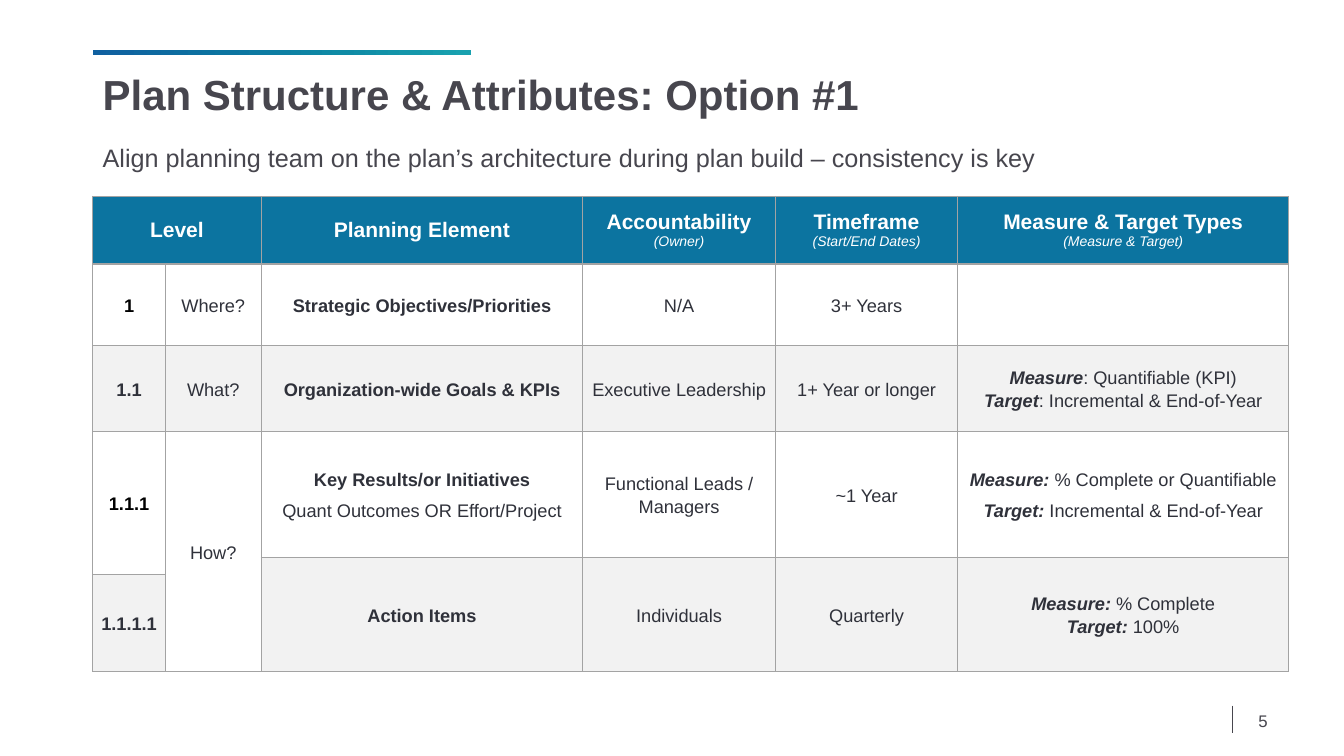
"""Build the plan structure slide with its table of levels and attributes."""
from copy import deepcopy
from dataclasses import dataclass

from lxml import etree
from pptx import Presentation
from pptx import util as u
from pptx.dml.color import RGBColor
from pptx.enum import shapes, text
from pptx.oxml import ns

DARK = RGBColor(0x47, 0x46, 0x4E)
BODY = RGBColor(0x2F, 0x31, 0x3A)
BLACK = RGBColor(0, 0, 0)
WHITE = RGBColor(0xFF, 0xFF, 0xFF)
GRAY = RGBColor(0xF2, 0xF2, 0xF2)
BLUE = RGBColor(0x0C, 0x74, 0xA0)
BORDER = RGBColor(0xA3, 0xA3, 0xA3)
BAR_STOPS = (
    (0, RGBColor(0x10, 0x60, 0xA0)),
    (0.36, BLUE),
    (0.66, RGBColor(0x0F, 0x8B, 0xA5)),
    (0.99, RGBColor(0x19, 0xA1, 0xAF)),
)
FONT = "Arial"
COLS = (0.72, 0.95, 3.19, 1.91, 1.81, 3.28)
ROWS = (0.67, 0.81, 0.85, 1.25, 0.17, 0.96)


@dataclass(frozen=True)
class Run:
    """A stretch of text in one style; a newline at its end breaks the line."""
    text: str
    bold: bool = False
    italic: bool = False
    size: float | None = None


@dataclass(frozen=True)
class Cell:
    """A table cell, its paragraphs and the rows and columns it covers."""
    row: int
    col: int
    paras: tuple[tuple[Run, ...], ...] = ()
    fill: RGBColor = WHITE
    color: RGBColor = BODY
    rows: int = 1
    cols: int = 1


@dataclass(frozen=True)
class Label:
    """A line of text standing outside the table."""
    text: str
    box: tuple[float, float, float, float]
    size: float
    bold: bool = False
    align: text.PP_ALIGN = text.PP_ALIGN.LEFT
    anchor: text.MSO_ANCHOR = text.MSO_ANCHOR.MIDDLE
    spacing: float = 1.0


def plain(words: str) -> tuple[tuple[Run, ...], ...]:
    """Return one regular paragraph."""
    return ((Run(words),),)


def strong(words: str) -> tuple[tuple[Run, ...], ...]:
    """Return one bold paragraph."""
    return ((Run(words, bold=True),),)


def heading(title: str, note: str) -> tuple[tuple[Run, ...], ...]:
    """Return a column heading with a small note below."""
    return ((Run(title + "\n", bold=True), Run(note, italic=True, size=10)),)


def term(name: str, words: str) -> tuple[Run, ...]:
    """Return a bold italic term followed by its meaning."""
    return Run(name, bold=True, italic=True), Run(words)


LABELS = (
    Label("Plan Structure & Attributes: Option #1", (0.92, 0.53, 11.5, 0.87), 30,
          bold=True, spacing=0.9),
    Label("Align planning team on the plan’s architecture during plan build – consistency is key",
          (0.92, 1.36, 9.57, 0.4), 18, anchor=text.MSO_ANCHOR.TOP),
    Label("5", (9.42, 6.95, 3.25, 0.4), 12, align=text.PP_ALIGN.RIGHT),
)
CELLS = (
    Cell(0, 0, strong("Level"), BLUE, WHITE, cols=2),
    Cell(0, 2, strong("Planning Element"), BLUE, WHITE),
    Cell(0, 3, heading("Accountability", "(Owner)"), BLUE, WHITE),
    Cell(0, 4, heading("Timeframe", "(Start/End Dates)"), BLUE, WHITE),
    Cell(0, 5, heading("Measure & Target Types", "(Measure & Target)"), BLUE, WHITE),
    Cell(1, 0, strong("1"), color=BLACK),
    Cell(1, 1, plain("Where?")),
    Cell(1, 2, strong("Strategic Objectives/Priorities")),
    Cell(1, 3, plain("N/A")),
    Cell(1, 4, plain("3+ Years")),
    Cell(1, 5),
    Cell(2, 0, strong("1.1"), GRAY),
    Cell(2, 1, plain("What?"), GRAY),
    Cell(2, 2, strong("Organization-wide Goals & KPIs"), GRAY),
    Cell(2, 3, plain("Executive Leadership"), GRAY),
    Cell(2, 4, plain("1+ Year or longer"), GRAY),
    Cell(2, 5, (term("Measure", ": Quantifiable (KPI)\n")
                + term("Target", ": Incremental & End-of-Year"),), GRAY),
    Cell(3, 0, strong("1.1.1"), color=BLACK, rows=2),
    Cell(3, 1, plain("How?"), rows=3),
    Cell(3, 2, strong("Key Results/or Initiatives") + plain("Quant Outcomes OR Effort/Project")),
    Cell(3, 3, plain("Functional Leads / Managers")),
    Cell(3, 4, plain("~1 Year")),
    Cell(3, 5, (term("Measure: ", "% Complete or Quantifiable"),
                term("Target: ", "Incremental & End-of-Year"))),
    Cell(4, 2, strong("Action Items"), GRAY, rows=2),
    Cell(4, 3, plain("Individuals"), GRAY, rows=2),
    Cell(4, 4, plain("Quarterly"), GRAY, rows=2),
    Cell(4, 5, (term("Measure: ", "% Complete\n") + term("Target: ", "100%"),), GRAY, rows=2),
    Cell(5, 0, strong("1.1.1.1"), GRAY),
)


def set_font(p, size: float, color: RGBColor) -> None:
    """Set the shared font of a paragraph."""
    p.font.name, p.font.size = FONT, u.Pt(size)
    p.font.color.rgb = color


def add_label(s, label: Label) -> None:
    """Draw a text box."""
    tf = s.shapes.add_textbox(*map(u.Inches, label.box)).text_frame
    tf.word_wrap = True
    tf.vertical_anchor = label.anchor
    p = tf.paragraphs[0]
    p.text, p.alignment, p.line_spacing = label.text, label.align, label.spacing
    set_font(p, label.size, DARK)
    p.font.bold = label.bold


def add_bar(s) -> None:
    """Draw the gradient bar above the title."""
    sp = s.shapes.add_shape(shapes.MSO_SHAPE.RECTANGLE, *map(u.Inches, (0.92, 0.5, 3.75, 0.05)))
    sp.shadow.inherit = False
    sp.line.fill.background()
    sp.fill.gradient()
    sp.fill.gradient_angle = 0
    stops = sp.fill._fill._gradFill.gsLst
    stops.extend([deepcopy(stops[0]), deepcopy(stops[0])])
    for stop, (position, color) in zip(sp.fill.gradient_stops, BAR_STOPS):
        stop.position, stop.color.rgb = position, color


def add_divider(s) -> None:
    """Draw the thin line beside the slide number."""
    line = s.shapes.add_connector(shapes.MSO_CONNECTOR.STRAIGHT,
                                  *map(u.Inches, (12.22, 7, 12.22, 7.27)))
    line.line.color.rgb, line.line.width = DARK, u.Pt(0.5)
    etree.SubElement(line._element.spPr, ns.qn("a:effectLst"))


def frame_cell(cell) -> None:
    """Give a table cell its margins and borders."""
    cell.margin_left = cell.margin_right = cell.margin_top = cell.margin_bottom = u.Inches(0.05)
    tc_pr = cell._tc.get_or_add_tcPr()
    for side in ("a:lnL", "a:lnR", "a:lnT", "a:lnB"):
        ln = etree.SubElement(tc_pr, ns.qn(side), w=str(u.Pt(1)))
        fill = etree.SubElement(ln, ns.qn("a:solidFill"))
        etree.SubElement(fill, ns.qn("a:srgbClr"), val=str(BORDER))


def fill_cell(table, item: Cell) -> None:
    """Merge, colour and write a table cell."""
    cell = table.cell(item.row, item.col)
    if item.rows * item.cols > 1:
        cell.merge(table.cell(item.row + item.rows - 1, item.col + item.cols - 1))
    cell.fill.solid()
    cell.fill.fore_color.rgb = item.fill
    cell.vertical_anchor = text.MSO_ANCHOR.MIDDLE
    tf = cell.text_frame
    for i, runs in enumerate(item.paras):
        p = tf.add_paragraph() if i else tf.paragraphs[0]
        p.alignment = text.PP_ALIGN.CENTER
        if item.row:
            p.line_spacing, p.space_after = 1.14, u.Pt(3)
            p.space_before = u.Pt(3 if i else 0)
        set_font(p, 13 if item.row else 15, item.color)
        for run in runs:
            r = p.add_run()
            r.text = run.text.rstrip("\n")
            r.font.bold, r.font.italic = run.bold, run.italic
            if run.size:
                r.font.size = u.Pt(run.size)
            if run.text.endswith("\n"):
                p.add_line_break()


def add_plan_table(s) -> None:
    """Draw the table of planning levels."""
    table = s.shapes.add_table(len(ROWS), len(COLS), *map(
        u.Inches, (0.92, 1.95, sum(COLS), sum(ROWS)))).table
    table.horz_banding = False
    for column, width in zip(table.columns, COLS):
        column.width = u.Inches(width)
    for row, height in zip(table.rows, ROWS):
        row.height = u.Inches(height)
    for cell in table.iter_cells():
        frame_cell(cell)
    for item in CELLS:
        fill_cell(table, item)


def main() -> None:
    """Build and save the slide."""
    prs = Presentation()
    prs.slide_width, prs.slide_height = u.Inches(13.33), u.Inches(7.5)
    s = prs.slides.add_slide(prs.slide_layouts[6])
    add_bar(s)
    add_divider(s)
    add_plan_table(s)
    for label in LABELS:
        add_label(s, label)
    prs.save("out.pptx")


if __name__ == "__main__":
    main()
